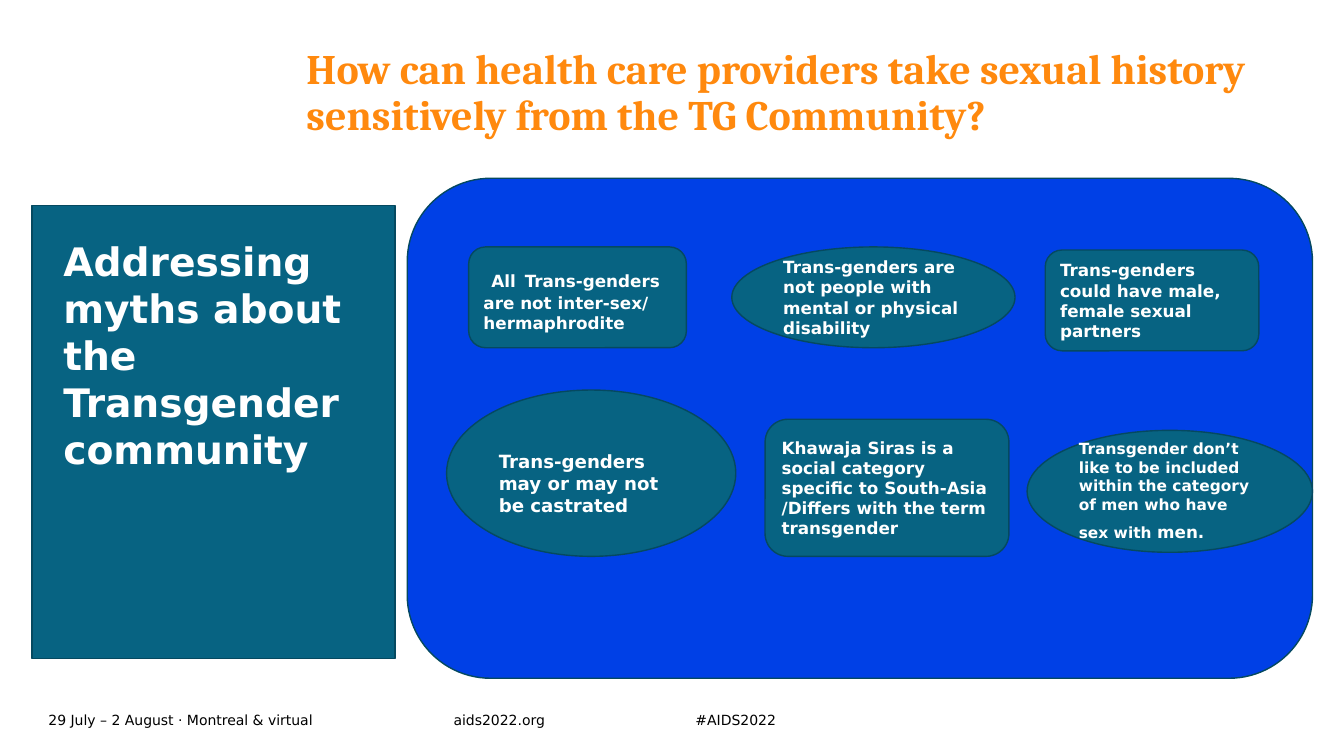
"""Build the slide on myths about the transgender community."""
from pptx import Presentation
from pptx.dml.color import RGBColor
from pptx.enum import shapes, text
from pptx.util import Pt

HUES = {"teal": "076382", "blue": "0040E6", "edge": "054960",
        "gold": "FF890E", "white": "FFFFFF", "black": "000000"}
SANS, SERIF = "DejaVu Sans", "Cambria"
KIND = shapes.MSO_SHAPE
RECT, ROUND, OVAL = KIND.RECTANGLE, KIND.ROUNDED_RECTANGLE, KIND.OVAL
TOP, MID = text.MSO_ANCHOR.TOP, text.MSO_ANCHOR.MIDDLE
INSET = (7.2, 3.6, 7.2, 3.6)
LOW = (7.2, 17.6, 7.2, 3.6)

TITLE = "How can health care providers take sexual history sensitively from the TG Community?"
TOPIC = "Addressing myths about the Transgender community"
FOOT = [
    (34.6, 289.4, "29 July – 2 August · Montreal & virtual"),
    (324, 139, "aids2022.org"),
    (496.8, 139, "#AIDS2022"),
]
MYTHS = [
    (ROUND, (334.8, 176.4, 155.5, 72), INSET,
     [(" ", 18, False), ("All", 12, True), (" ", 18, True),
      ("Trans-genders are not inter-sex/ hermaphrodite", 12, True)]),
    (OVAL, (522.7, 176.4, 202.3, 72), INSET,
     [("Trans-genders are not people with mental or physical disability", 12, True)]),
    (ROUND, (746.6, 178.6, 152.6, 72), INSET,
     [("Trans-genders could have male, female sexual partners", 12, True)]),
    (OVAL, (319, 278.6, 206.6, 118.8), LOW,
     [("Trans-genders may or may not be castrated", 13, True)]),
    (ROUND, (546.5, 299.5, 174.2, 97.9), INSET,
     [("Khawaja Siras is a social category specific to South-Asia "
       "/Differs with the term transgender", 12, True)]),
    (OVAL, (733.7, 307.4, 203.8, 87.1), INSET,
     [("Transgender don’t like to be included within the category "
       "of men who have sex with ", 11, True), ("men.", 12, True), (" ", 18, True)]),
]

deck = Presentation()
deck.slide_width, deck.slide_height = Pt(960), Pt(540)
slide = deck.slides.add_slide(deck.slide_layouts[6])


def hue(name):
    return RGBColor.from_string(HUES[name])


def write(shape, runs, color="white", face=SANS, anchor=MID, inset=INSET, lead=None):
    frame = shape.text_frame
    frame.word_wrap = True
    frame.vertical_anchor = anchor
    (frame.margin_left, frame.margin_top,
     frame.margin_right, frame.margin_bottom) = map(Pt, inset)
    para = frame.paragraphs[0]
    para.alignment = text.PP_ALIGN.LEFT
    para.line_spacing = lead
    for words, size, bold in runs:
        run = para.add_run()
        run.text = words
        font = run.font
        font.name, font.size, font.bold = face, Pt(size), bold
        font.color.rgb = hue(color)


def label(box, runs, **look):
    write(slide.shapes.add_textbox(*map(Pt, box)), runs, inset=(0,) * 4, **look)


def block(kind, box, fill="teal"):
    shape = slide.shapes.add_shape(kind, *map(Pt, box))
    shape.shadow.inherit = False
    shape.fill.solid()
    shape.fill.fore_color.rgb = hue(fill)
    shape.line.color.rgb = hue("edge")
    shape.line.width = Pt(1)
    return shape


for left, width, words in FOOT:
    label((left, 505.4, width, 17.3), [(words, 10, False)], color="black")
label((218.9, 34.6, 705.6, 96.5), [(TITLE, 30, True)],
      color="gold", face=SERIF, anchor=TOP, lead=0.9)
write(block(RECT, (23, 146.9, 259.2, 323.3)), [(TOPIC, 28, True)],
      anchor=TOP, inset=(22.3,) * 4)
block(ROUND, (290.9, 127.4, 646.6, 357.1), "blue")
for kind, box, inset, runs in MYTHS:
    write(block(kind, box), runs, inset=inset)

deck.save("out.pptx")
